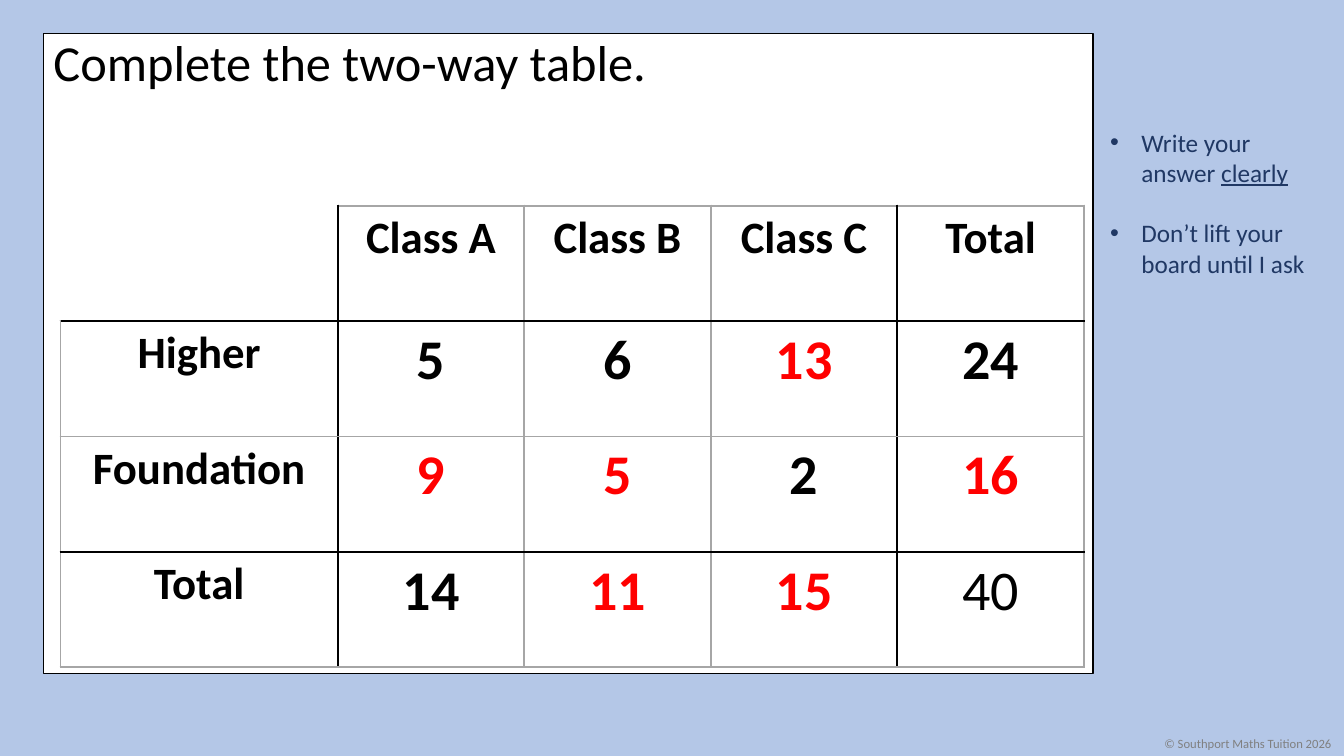
"""Build a slide with a two-way table of classes and tiers, and its answers on top."""
from dataclasses import dataclass

from lxml.etree import SubElement
from pptx import Presentation
from pptx.dml.color import RGBColor
from pptx.enum.shapes import MSO_SHAPE
from pptx.enum.text import MSO_ANCHOR, MSO_AUTO_SIZE, PP_ALIGN
from pptx.oxml.ns import qn
from pptx.util import Inches, Pt


@dataclass(frozen=True)
class Theme:
    font: str = "Calibri"
    background: str = "B4C7E7"
    panel: str = "FFFFFF"
    ink: str = "000000"
    grid: str = "A6A6A6"
    answer: str = "FF0000"
    reminder: str = "203864"
    copyright: str = "808080"
    title_size: int = 36
    label_size: int = 32
    value_size: int = 40
    reminder_size: int = 18
    copyright_size: int = 9


theme = Theme()


def add_run(paragraph, text, size, color, bold=False, underline=False):
    run = paragraph.add_run()
    run.text = text
    run.font.name = theme.font
    run.font.size = Pt(size)
    run.font.bold = bold
    run.font.underline = underline
    run.font.color.rgb = RGBColor.from_string(color)


def add_border(cell, side, color):
    line = SubElement(cell._tc.get_or_add_tcPr(), qn(f"a:ln{side}"), w=str(Pt(1.5)))
    if color:
        fill = SubElement(line, qn("a:solidFill"))
        SubElement(fill, qn("a:srgbClr"), val=color)
    else:
        SubElement(line, qn("a:noFill"))


presentation = Presentation()
presentation.slide_width = Inches(13.33)
presentation.slide_height = Inches(7.5)
slide = presentation.slides.add_slide(presentation.slide_layouts[1])
slide.background.fill.solid()
slide.background.fill.fore_color.rgb = RGBColor.from_string(theme.background)

panel_box = [Inches(value) for value in (0.43, 0.33, 10.41, 6.35)]
panel = slide.shapes.add_shape(MSO_SHAPE.RECTANGLE, *panel_box)
panel.shadow.inherit = False
panel.fill.solid()
panel.fill.fore_color.rgb = RGBColor.from_string(theme.panel)
panel.line.color.rgb = RGBColor.from_string(theme.ink)
panel.line.width = Pt(1)
slide.shapes._spTree.insert(2, panel._element)

title = slide.shapes.title
reminders = slide.placeholders[1]
reminders_box = [Inches(value) for value in (10.91, 1.21, 2.32, 1.62)]
for placeholder, box in ((title, panel_box), (reminders, reminders_box)):
    placeholder.left, placeholder.top, placeholder.width, placeholder.height = box
    placeholder.text_frame.vertical_anchor = MSO_ANCHOR.TOP
    placeholder.text_frame.auto_size = MSO_AUTO_SIZE.NONE
    placeholder.text_frame.word_wrap = True

paragraph = title.text_frame.paragraphs[0]
paragraph.alignment = PP_ALIGN.LEFT
paragraph.line_spacing = 0.9
add_run(paragraph, "Complete the two-way table.", theme.title_size, theme.ink)

reminder_runs = [
    [("Write your answer ", False), ("clearly", True)],
    [("Don’t lift your board until I ask", False)],
]
for index, runs in enumerate(reminder_runs):
    frame = reminders.text_frame
    paragraph = frame.add_paragraph() if index else frame.paragraphs[0]
    properties = paragraph._p.get_or_add_pPr()
    properties.set("marL", str(Inches(0.31)))
    properties.set("indent", str(-Inches(0.31)))
    SubElement(properties, qn("a:buFont"), typeface="Arial")
    SubElement(properties, qn("a:buChar"), char="•")
    paragraph.space_before = Pt(21.6 if index else 0)
    for text, underline in runs:
        add_run(paragraph, text, theme.reminder_size, theme.reminder, underline=underline)

copyright_box = slide.shapes.add_textbox(Inches(11.45), Inches(7.25), Inches(1.88), Inches(0.25))
copyright_box.text_frame.word_wrap = False
add_run(copyright_box.text_frame.paragraphs[0], "© Southport Maths Tuition 2026",
        theme.copyright_size, theme.copyright)

rows = [
    ["", "Class A", "Class B", "Class C", "Total"],
    ["Higher", "5", "6", "13", "24"],
    ["Foundation", "9", "5", "2", "16"],
    ["Total", "14", "11", "15", "40"],
]
answers = {(1, 3), (2, 1), (2, 2), (2, 4), (3, 2), (3, 3)}
grand_total = (3, 4)
dark_columns = {1, 4}
dark_rows = {1, 3}
table_box = [Inches(value) for value in (0.6, 2.04, 10.15, 4.58)]

for show_answers in (False, True):
    table = slide.shapes.add_table(4, 5, *table_box).table
    table.first_row = False
    table.horz_banding = False
    for index, column in enumerate(table.columns):
        column.width = Inches(1.85 if index else 2.75)
    for row in table.rows:
        row.height = Inches(4.58 / 4)

    for row_index, texts in enumerate(rows):
        for column_index, text in enumerate(texts):
            position = (row_index, column_index)
            cell = table.cell(*position)
            for side, edge, dark in (
                ("L", column_index, dark_columns),
                ("R", column_index + 1, dark_columns),
                ("T", row_index, dark_rows),
                ("B", row_index + 1, dark_rows),
            ):
                color = theme.ink if edge in dark else theme.grid
                add_border(cell, side, None if position == (0, 0) and edge == 0 else color)
            cell.fill.solid()
            cell.fill.fore_color.rgb = RGBColor.from_string(theme.panel)
            if text and (show_answers or position not in answers):
                paragraph = cell.text_frame.paragraphs[0]
                paragraph.alignment = PP_ALIGN.CENTER
                add_run(
                    paragraph,
                    text,
                    theme.value_size if row_index and column_index else theme.label_size,
                    theme.answer if position in answers else theme.ink,
                    bold=position != grand_total,
                )

presentation.save("out.pptx")
